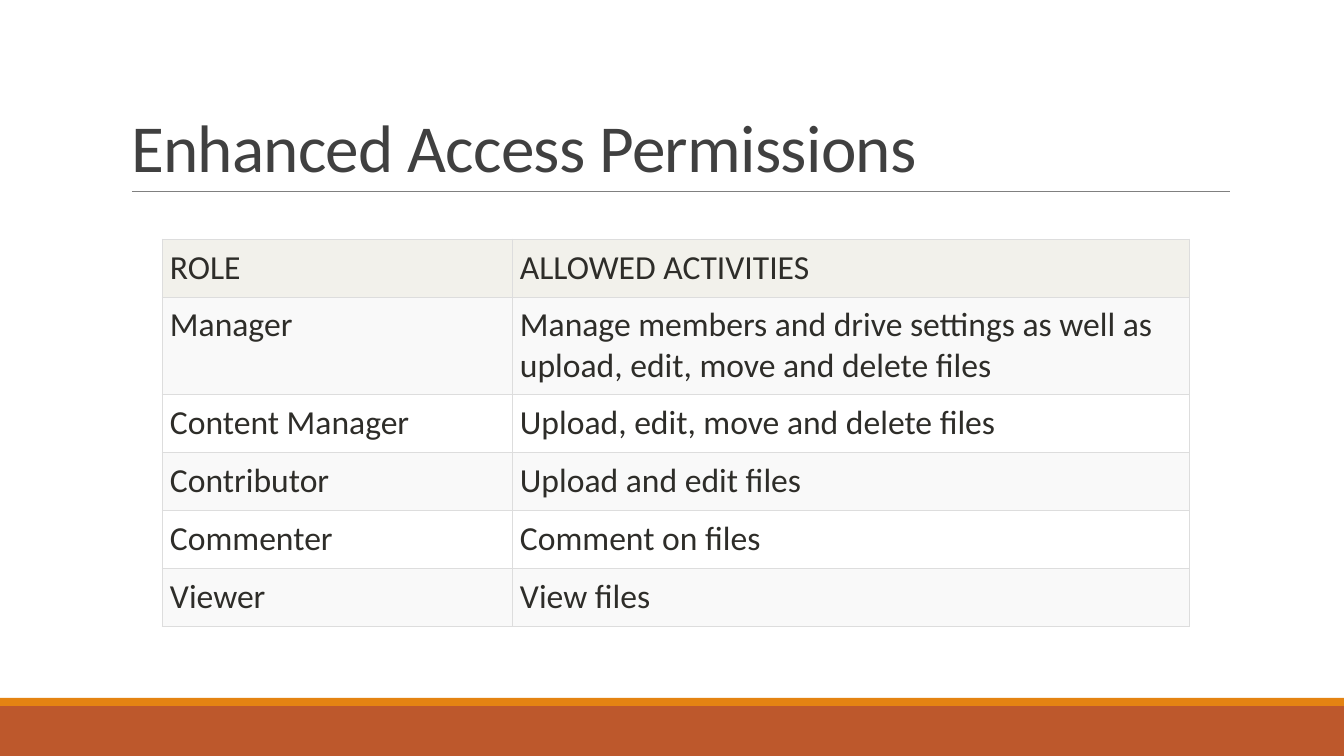
from lxml import etree
from pptx import Presentation
from pptx.dml.color import RGBColor
from pptx.enum.shapes import MSO_CONNECTOR, MSO_SHAPE
from pptx.enum.text import MSO_ANCHOR, MSO_AUTO_SIZE, PP_ALIGN
from pptx.oxml import parse_xml
from pptx.oxml.ns import nsdecls, qn
from pptx.util import Emu, Pt

STRAIGHT = MSO_CONNECTOR.STRAIGHT
RECTANGLE = MSO_SHAPE.RECTANGLE
TOP, BOTTOM = MSO_ANCHOR.TOP, MSO_ANCHOR.BOTTOM
NO_AUTOFIT = MSO_AUTO_SIZE.NONE
LEFT = PP_ALIGN.LEFT

FONT = "Calibri"
COLORS = {
    "footer": "BD582C",
    "stripe": "E48312",
    "rule": "808080",
    "title": "404040",
    "text": "2E2D29",
    "header": "F2F1EB",
    "odd": "F9F9F9",
    "even": "FFFFFF",
    "border": "DDDDDD",
}
ROLES = [
    ("ROLE", "ALLOWED ACTIVITIES"),
    ("Manager", "Manage members and drive settings as well as upload, edit, move and delete files"),
    ("Content Manager", "Upload, edit, move and delete files"),
    ("Contributor", "Upload and edit files"),
    ("Commenter", "Comment on files"),
    ("Viewer", "View files"),
]
COLUMN_WIDTHS = [350, 678]
ROW_HEIGHTS = [58, 98, 58, 58, 58, 58]


def px(length):
    return Emu(round(length * 914400 / 100.8))


def color(name):
    return RGBColor.from_string(COLORS[name])


prs = Presentation()
prs.slide_width, prs.slide_height = px(1344), px(756)
slide = prs.slides.add_slide(prs.slide_layouts[5])

for band_color, top, height in [("footer", 706, 50), ("stripe", 698, 8)]:
    band = slide.shapes.add_shape(RECTANGLE, 0, px(top), px(1344), px(height))
    band.shadow.inherit = False
    band.fill.solid()
    band.fill.fore_color.rgb = color(band_color)
    band.line.fill.background()

rule = slide.shapes.add_connector(STRAIGHT, px(132), px(191), px(1230), px(191))
rule.line.color.rgb = color("rule")
rule.line.width = Pt(0.5)
etree.SubElement(rule._element.spPr, qn("a:effectLst"))

title = slide.shapes.title
title.left, title.top, title.width, title.height = px(121), px(31), px(1109), px(160)
title.text_frame.text = "Enhanced Access Permissions"
title.text_frame.auto_size = NO_AUTOFIT
title.text_frame.vertical_anchor = BOTTOM
heading = title.text_frame.paragraphs[0]
heading.alignment = LEFT
heading.line_spacing = 0.85
heading.font.name = FONT
heading.font.size = Pt(48)
heading.font.color.rgb = color("title")
heading.runs[0].font._element.set("spc", "-50")

permissions = slide.shapes.add_table(
    len(ROLES), len(COLUMN_WIDTHS), px(162), px(239), px(sum(COLUMN_WIDTHS)), px(sum(ROW_HEIGHTS))
).table
for column, width in zip(permissions.columns, COLUMN_WIDTHS):
    column.width = px(width)

for row_index, (height, entries) in enumerate(zip(ROW_HEIGHTS, ROLES)):
    permissions.rows[row_index].height = px(height)
    row_color = "header" if row_index == 0 else ("even", "odd")[row_index % 2]
    for column_index, entry in enumerate(entries):
        cell = permissions.cell(row_index, column_index)
        cell.text = entry
        cell.margin_left = cell.margin_right = cell.margin_top = cell.margin_bottom = px(8)
        cell.vertical_anchor = BOTTOM if row_index == 0 else TOP
        cell.fill.solid()
        cell.fill.fore_color.rgb = color(row_color)
        font = cell.text_frame.paragraphs[0].font
        font.name = FONT
        font.size = Pt(24)
        font.bold = False
        font.color.rgb = color("text")
        for position, side in enumerate(["lnL", "lnR", "lnT", "lnB"]):
            border = parse_xml(
                f'<a:{side} {nsdecls("a")} w="{Pt(0.75)}"><a:solidFill>'
                f'<a:srgbClr val="{COLORS["border"]}"/></a:solidFill></a:{side}>'
            )
            cell._tc.tcPr.insert(position, border)

prs.save("out.pptx")
